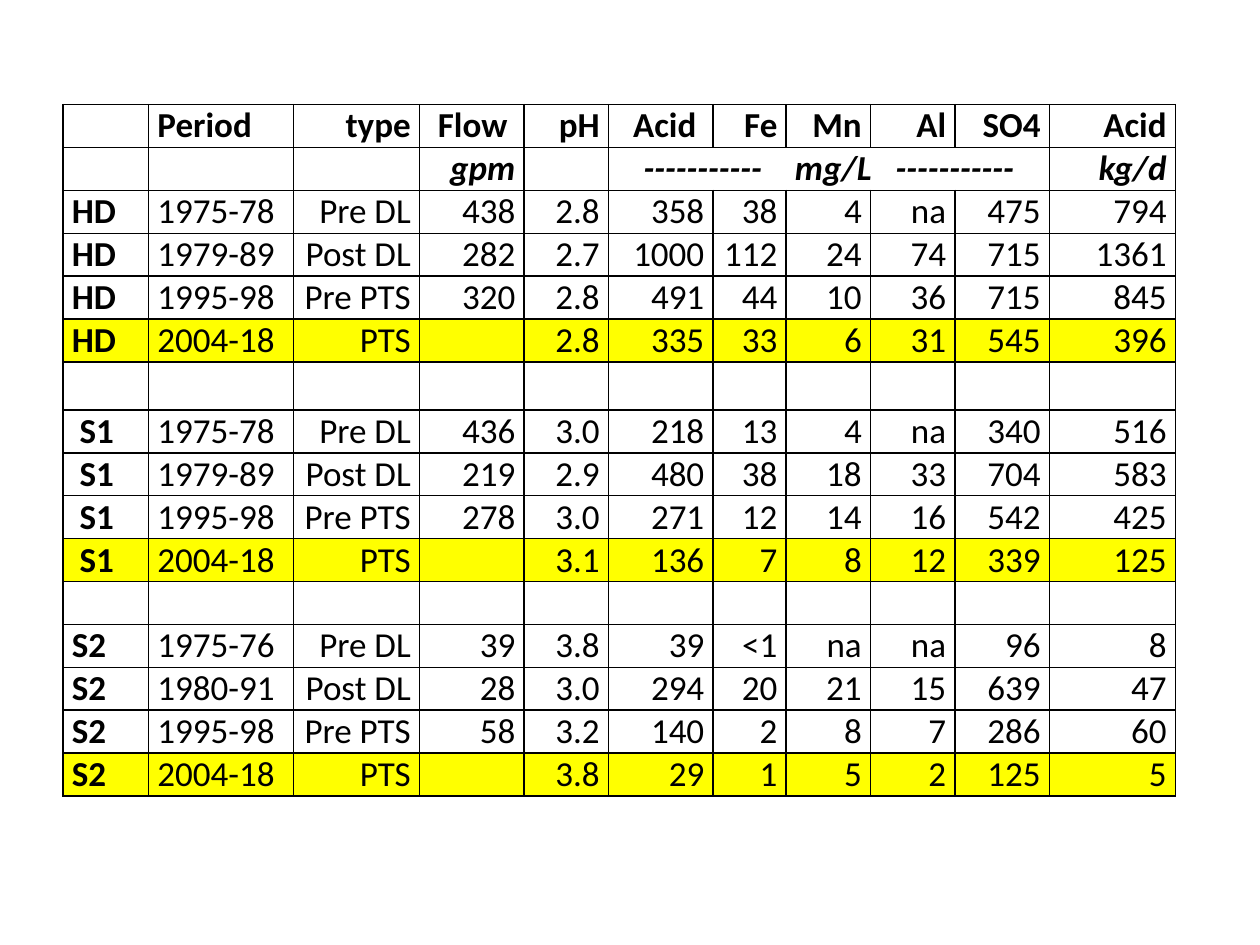
from lxml.etree import SubElement
from pptx import Presentation
from pptx.dml.color import RGBColor
from pptx.enum.text import PP_ALIGN
from pptx.oxml.ns import qn
from pptx.util import Inches, Pt

# Content: each site has four periods, the last one highlighted
HEADINGS = ["", "Period", "type", "Flow ", "pH", "Acid ", "Fe", "Mn", "Al", "SO4", "Acid"]
DASHES = "-" * 11
UNITS = ["", "", "", "gpm", "", f"\t{DASHES}\tmg/L\t{DASHES}", "", "", "", "", "kg/d"]
TYPES = ["Pre DL", "Post DL", "Pre PTS", "PTS"]
SITES = {
    "HD": [
        ("1975-78", "438", "2.8", "358", "38", "4", "na", "475", "794"),
        ("1979-89", "282", "2.7", "1000", "112", "24", "74", "715", "1361"),
        ("1995-98", "320", "2.8", "491", "44", "10", "36", "715", "845"),
        ("2004-18", "", "2.8", "335", "33", "6", "31", "545", "396"),
    ],
    " S1": [
        ("1975-78", "436", "3.0", "218", "13", "4", "na", "340", "516"),
        ("1979-89", "219", "2.9", "480", "38", "18", "33", "704", "583"),
        ("1995-98", "278", "3.0", "271", "12", "14", "16", "542", "425"),
        ("2004-18", "", "3.1", "136", "7", "8", "12", "339", "125"),
    ],
    "S2": [
        ("1975-76", "39", "3.8", "39", "<1", "na", "na", "96", "8"),
        ("1980-91", "28", "3.0", "294", "20", "21", "15", "639", "47"),
        ("1995-98", "58", "3.2", "140", "2", "8", "7", "286", "60"),
        ("2004-18", "", "3.8", "29", "1", "5", "2", "125", "5"),
    ],
}

# Format
COLORS = {"text": "000000", "line": "000000", "plain": "FFFFFF", "highlight": "FFFF00"}
FONT = {"name": "Calibri", "size": Pt(20)}
MARGINS = {"margin_left": Inches(0.07), "margin_right": Inches(0.07),
           "margin_top": 0, "margin_bottom": 0}
COLUMN_WIDTHS = [0.68, 1.15, 1, 0.83, 0.67, 0.83, 0.58, 0.67, 0.67, 0.75, 1]
ROW_HEIGHT, FIRST_GAP_HEIGHT = 0.34, 0.38
LEFT, TOP = 0.5, 0.83
UNIT_ROW, UNIT_FIRST, UNIT_LAST = 1, 5, 9
UNIT_TABS = [0.21, 1.41, 2.21]


def set_attributes(target, values):
    for name, value in values.items():
        setattr(target, name, value)


def add_borders(cell):
    properties = cell._tc.get_or_add_tcPr()
    for index, side in enumerate(("lnL", "lnR", "lnT", "lnB")):
        line = properties.makeelement(qn(f"a:{side}"), {"w": str(Pt(1))})
        properties.insert(index, line)
        fill = SubElement(line, qn("a:solidFill"))
        SubElement(fill, qn("a:srgbClr"), val=COLORS["line"])


def add_tabs(paragraph, positions):
    tabs = SubElement(paragraph._p.get_or_add_pPr(), qn("a:tabLst"))
    for position in positions:
        SubElement(tabs, qn("a:tab"), pos=str(Inches(position)), algn="l")


def format_cell(cell, text, fill, align, bold, italic):
    set_attributes(cell, MARGINS)
    cell.fill.solid()
    cell.fill.fore_color.rgb = RGBColor.from_string(COLORS[fill])
    add_borders(cell)
    if text:
        paragraph = cell.text_frame.paragraphs[0]
        paragraph.alignment = align
        run = paragraph.add_run()
        run.text = text
        set_attributes(run.font, {**FONT, "bold": bold, "italic": italic})
        run.font.color.rgb = RGBColor.from_string(COLORS["text"])


# Rows, with an empty one between sites
rows, gap_rows, highlighted_rows = [HEADINGS, UNITS], [], []
for site, periods in SITES.items():
    if len(rows) > 2:
        gap_rows.append(len(rows))
        rows.append([""] * len(HEADINGS))
    for kind, (period, *values) in zip(TYPES, periods):
        rows.append([site, period, kind, *values])
    highlighted_rows.append(len(rows) - 1)
heights = [ROW_HEIGHT] * len(rows)
heights[gap_rows[0]] = FIRST_GAP_HEIGHT

# Slide and table
presentation = Presentation()
presentation.slide_width, presentation.slide_height = Inches(10), Inches(7.5)
slide = presentation.slides.add_slide(presentation.slide_layouts[6])
table = slide.shapes.add_table(
    len(rows), len(HEADINGS), Inches(LEFT), Inches(TOP),
    Inches(sum(COLUMN_WIDTHS)), Inches(sum(heights))).table
set_attributes(table, {"first_row": False, "horz_banding": False})
for column, width in zip(table.columns, COLUMN_WIDTHS):
    column.width = Inches(width)
for row, height in zip(table.rows, heights):
    row.height = Inches(height)

# Cells
for row_index, row in enumerate(rows):
    fill = "highlight" if row_index in highlighted_rows else "plain"
    for column_index, text in enumerate(row):
        is_mg_label = (row_index, column_index) == (UNIT_ROW, UNIT_FIRST)
        align = PP_ALIGN.LEFT if column_index < 2 or is_mg_label else PP_ALIGN.RIGHT
        cell = table.cell(row_index, column_index)
        if is_mg_label:
            add_tabs(cell.text_frame.paragraphs[0], UNIT_TABS)
        format_cell(cell, text, fill, align,
                    bold=row_index <= UNIT_ROW or column_index == 0,
                    italic=row_index == UNIT_ROW)
table.cell(UNIT_ROW, UNIT_FIRST).merge(table.cell(UNIT_ROW, UNIT_LAST))

presentation.save("out.pptx")
